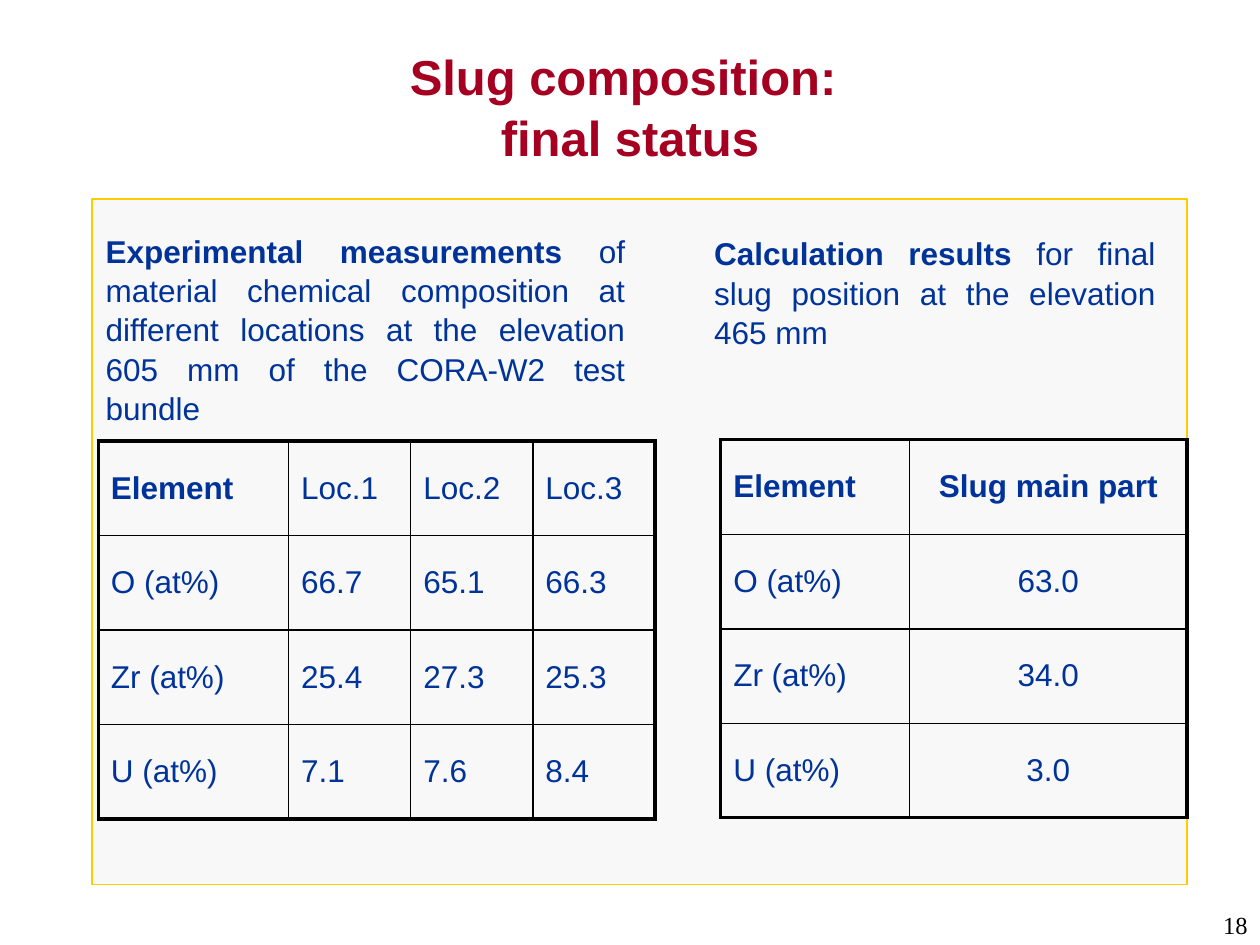
import pptx
import pptx.util
import pptx.dml.color
import pptx.enum.shapes
import pptx.enum.text
import pptx.oxml
import pptx.oxml.ns

Inches = pptx.util.Inches
Pt = pptx.util.Pt
ALIGN = pptx.enum.text.PP_ALIGN
ANCHOR = pptx.enum.text.MSO_ANCHOR

COLORS = {"title": "A50021", "body": "003399", "panel": "F8F8F8",
          "frame": "FFCC00", "border": "000000", "number": "000000"}

TITLE = "Slug composition: \vfinal status"
PAGE_NUMBER = "18"
PANEL_BOX = (0.73, 1.58, 8.69, 5.44)
CAPTIONS = [
    {"box": (0.74, 1.78, 4.32, 1.6),
     "runs": [("Experimental measurements", True),
              (" of material chemical composition at different locations "
               "at the elevation 605 mm of the CORA-W2 test bundle", False)]},
    {"box": (5.57, 1.8, 3.7, 1),
     "runs": [("Calculation results", True),
              (" for final slug position at the elevation 465 mm", False)]},
]
TABLES = [
    {"origin": (0.78, 3.5), "columns": [1.51, 0.97, 0.97, 0.97],
     "bold_headers": 1, "value_align": ALIGN.LEFT,
     "rows": [["Element", "Loc.1", "Loc.2", "Loc.3"],
              ["O (at%)", "66.7", "65.1", "66.3"],
              ["Zr (at%)", "25.4", "27.3", "25.3"],
              ["U (at%)", "7.1", "7.6", "8.4"]]},
    {"origin": (5.72, 3.49), "columns": [1.5, 2.2],
     "bold_headers": 2, "value_align": ALIGN.CENTER,
     "rows": [["Element", "Slug main part"],
              ["O (at%)", "63.0"],
              ["Zr (at%)", "34.0"],
              ["U (at%)", "3.0"]]},
]
ROW_HEIGHT = 0.75
OUTER_WIDTH, INNER_WIDTH = 2.25, 1


def rgb(name):
    return pptx.dml.color.RGBColor.from_string(COLORS[name])


def write(frame, runs, size=18, font="Arial", color="body",
          align=ALIGN.LEFT, anchor=ANCHOR.TOP, spacing=None):
    frame.word_wrap = True
    frame.vertical_anchor = anchor
    paragraph = frame.paragraphs[0]
    paragraph.alignment = align
    paragraph.space_before = Pt(0)
    paragraph.line_spacing = spacing
    for part, (text, bold) in enumerate(runs):
        for line, piece in enumerate(text.split("\v")):
            if line:
                paragraph.add_line_break()
            run = paragraph.add_run()
            run.text = piece
            run.font.size = Pt(size)
            run.font.name = font
            run.font.bold = bold
            run.font.color.rgb = rgb(color)


def set_borders(cell, widths):
    properties = cell._tc.get_or_add_tcPr()
    for side, width in widths.items():
        properties.append(pptx.oxml.parse_xml(
            f'<a:ln{side} {pptx.oxml.ns.nsdecls("a")} w="{Pt(width)}">'
            f'<a:solidFill><a:srgbClr val="{COLORS["border"]}"/></a:solidFill>'
            f'</a:ln{side}>'))


def add_composition(slide, data):
    rows, columns = data["rows"], data["columns"]
    last_row, last_column = len(rows) - 1, len(columns) - 1
    left, top = data["origin"]
    table = slide.shapes.add_table(
        len(rows), len(columns), Inches(left), Inches(top),
        Inches(sum(columns)), Inches(ROW_HEIGHT * len(rows))).table
    table.first_row = table.horz_banding = False
    for column, width in zip(table.columns, columns):
        column.width = Inches(width)
    for r, values in enumerate(rows):
        table.rows[r].height = Inches(ROW_HEIGHT)
        for c, value in enumerate(values):
            cell = table.cell(r, c)
            outer = {"L": c == 0, "R": c == last_column,
                     "T": r == 0, "B": r == last_row}
            set_borders(cell, {side: OUTER_WIDTH if edge else INNER_WIDTH
                               for side, edge in outer.items()})
            cell.fill.background()
            cell.vertical_anchor = ANCHOR.MIDDLE
            write(cell.text_frame, [(value, r == 0 and c < data["bold_headers"])],
                  align=data["value_align"] if c else ALIGN.LEFT,
                  anchor=None)


def main():
    deck = pptx.Presentation()
    deck.slide_width, deck.slide_height = Inches(10), Inches(7.5)
    slide = deck.slides.add_slide(deck.slide_layouts[5])

    panel = slide.shapes.add_shape(
        pptx.enum.shapes.MSO_SHAPE.RECTANGLE, *map(Inches, PANEL_BOX))
    panel.shadow.inherit = False
    panel.fill.solid()
    panel.fill.fore_color.rgb = rgb("panel")
    panel.line.color.rgb = rgb("frame")
    panel.line.width = Pt(1)

    title = slide.shapes.title
    title.left, title.top, title.width, title.height = map(
        Inches, (0.5, 0.3, 9, 1.25))
    write(title.text_frame, [(TITLE, True)], size=28, color="title",
          align=ALIGN.CENTER, spacing=1.04)

    for data in TABLES:
        add_composition(slide, data)
    for caption in CAPTIONS:
        box = slide.shapes.add_textbox(*map(Inches, caption["box"]))
        write(box.text_frame, caption["runs"], align=ALIGN.JUSTIFY, spacing=1.04)

    number = slide.shapes.add_textbox(*map(Inches, (7.92, 7.18, 2.08, 0.32)))
    write(number.text_frame, [(PAGE_NUMBER, False)], size=14,
          font="Times New Roman", color="number",
          align=ALIGN.RIGHT, anchor=ANCHOR.MIDDLE)

    deck.save("out.pptx")


if __name__ == "__main__":
    main()
